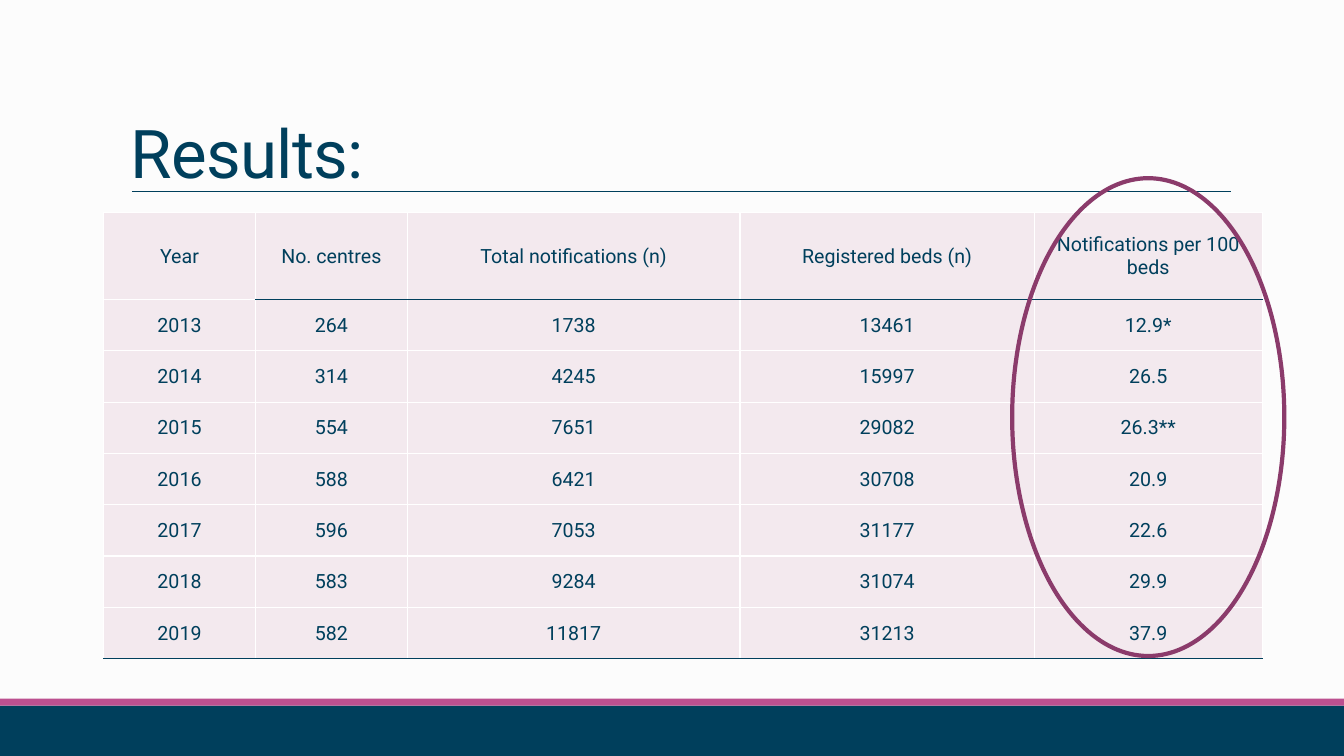
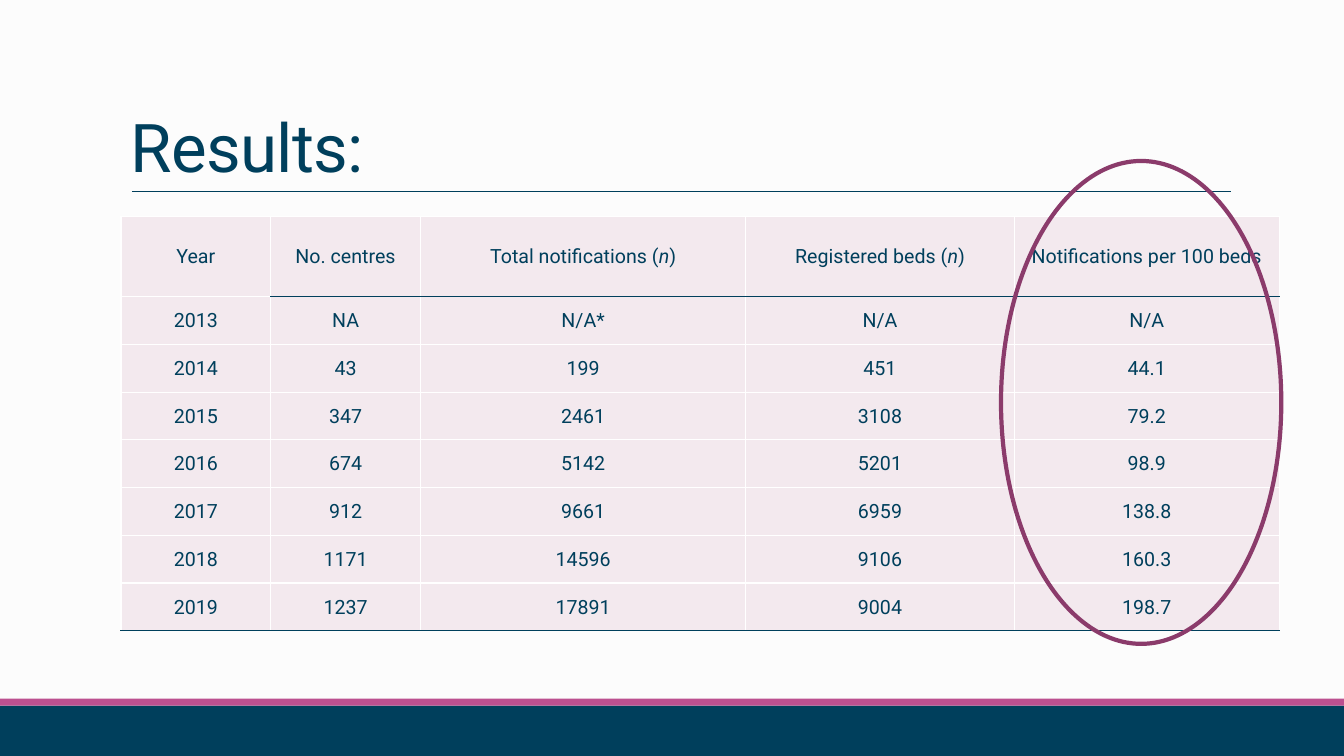
from dataclasses import dataclass

from pptx import Presentation
from pptx.dml.color import RGBColor as RGB
from pptx.enum.shapes import MSO_CONNECTOR as Link, MSO_SHAPE as Kind
from pptx.enum.text import MSO_ANCHOR as Anchor, PP_ALIGN as Align
from pptx.oxml.ns import qn
from pptx.util import Pt
from lxml.etree import SubElement, Element


@dataclass(frozen=True)
class Theme:
    font: str = "Roboto"
    page: str = "FCFCFC"
    navy: str = "003F5C"
    pink: str = "BC5090"
    plum: str = "8B3B6B"
    tint: str = "F3E9EE"
    white: str = "FFFFFF"
    head: int = 48
    body: int = 14


T = Theme()
WIDE, HIGH = 960, 540


def paint(fill, tone):
    fill.solid()
    fill.fore_color.rgb = RGB.from_string(tone)


def write(frame, text, size=T.body, tone=T.navy, align=Align.LEFT,
          anchor=Anchor.MIDDLE, lead=None, track=None):
    """Set one paragraph; text between underscores is italic."""
    frame.word_wrap = True
    frame.vertical_anchor = anchor
    para = frame.paragraphs[0]
    para.alignment = align
    if lead:
        para.line_spacing = lead
    for i, part in enumerate(text.split("_")):
        run = para.add_run()
        run.text = part
        font = run.font
        font.name, font.size = T.font, Pt(size)
        font.color.rgb = RGB.from_string(tone)
        if i % 2:
            font.italic = True
        if track:
            font._element.set("spc", str(int(track * 100)))


def shape(slide, kind, box, fill=None, line=None, width=1):
    item = slide.shapes.add_shape(kind, *map(Pt, box))
    item.shadow.inherit = False
    if fill:
        paint(item.fill, fill)
    else:
        item.fill.background()
    if line:
        paint(item.line.fill, line)
        item.line.width = Pt(width)
    else:
        item.line.fill.background()


def frame(slide):
    """Background, footer bands and title rule."""
    paint(slide.background.fill, T.page)
    shape(slide, Kind.RECTANGLE, (0, 504, WIDE, 36), T.navy)
    shape(slide, Kind.RECTANGLE, (0, 499, WIDE, 5), T.pink)
    rule = slide.shapes.add_connector(
        Link.STRAIGHT, Pt(94.3), Pt(136.5), Pt(879), Pt(136.5))
    paint(rule.line.fill, T.navy)
    rule.line.width = Pt(0.5)
    SubElement(rule._element.spPr, qn("a:effectLst"))


def title(slide, text, box):
    area = slide.shapes.add_textbox(*map(Pt, box))
    write(area.text_frame, text, size=T.head, anchor=Anchor.BOTTOM,
          lead=0.85, track=-0.5)


def border(cell, top, base):
    """Side borders are white; top and base take the given tones."""
    props = cell._tc.get_or_add_tcPr()
    sides = {"L": T.white, "R": T.white, "T": top, "B": base}
    for i, (side, tone) in enumerate(sides.items()):
        line = Element(qn(f"a:ln{side}"), w=str(Pt(1)))
        fill = SubElement(line, qn("a:solidFill"))
        SubElement(fill, qn("a:srgbClr"), val=tone)
        props.insert(i, line)


def table(slide, spot, cols, head, step, rows):
    left, top = spot
    last = len(rows) - 1
    grid = slide.shapes.add_table(
        len(rows), len(cols), Pt(left), Pt(top),
        Pt(sum(cols)), Pt(head + step * last)).table
    grid.first_row = grid.horz_banding = False
    for col, width in zip(grid.columns, cols):
        col.width = Pt(width)
    for r, row in enumerate(rows):
        grid.rows[r].height = Pt(step if r else head)
        for c, text in enumerate(row):
            cell = grid.cell(r, c)
            cell.margin_left = cell.margin_right = cell.margin_top = Pt(0.7)
            cell.margin_bottom = 0
            paint(cell.fill, T.tint)
            # The header rule starts after the year column
            border(cell, T.navy if r == 1 and c else T.white,
                   T.navy if r == last or (r == 0 and c) else T.white)
            write(cell.text_frame, text, align=Align.CENTER)
            cell.vertical_anchor = Anchor.MIDDLE


def result(deck, name, spot, cols, head, step, rows, ring):
    """One results slide: title, table and ring round the rates."""
    slide = deck.slides.add_slide(deck.slide_layouts[6])
    frame(slide)
    title(slide, "Results:", name)
    table(slide, spot, cols, head, step, rows)
    shape(slide, Kind.OVAL, ring, line=T.plum, width=3)


def labels(n):
    return ("Year", "No. centres", f"Total notifications ({n})",
            f"Registered beds ({n})", "Notifications per 100 beds")


FIRST = [
    labels("n"),
    ("2013", "264", "1738", "13461", "12.9*"),
    ("2014", "314", "4245", "15997", "26.5"),
    ("2015", "554", "7651", "29082", "26.3**"),
    ("2016", "588", "6421", "30708", "20.9"),
    ("2017", "596", "7053", "31177", "22.6"),
    ("2018", "583", "9284", "31074", "29.9"),
    ("2019", "582", "11817", "31213", "37.9"),
]
SECOND = [
    labels("_n_"),
    ("2013", "NA", "N/A*", "N/A", "N/A"),
    ("2014", "43", "199", "451", "44.1"),
    ("2015", "347", "2461", "3108", "79.2"),
    ("2016", "674", "5142", "5201", "98.9"),
    ("2017", "912", "9661", "6959", "138.8"),
    ("2018", "1171", "14596", "9106", "160.3"),
    ("2019", "1237", "17891", "9004", "198.7"),
]


def main():
    deck = Presentation()
    deck.slide_width, deck.slide_height = Pt(WIDE), Pt(HIGH)
    result(deck, (86.4, 26.6, 792, 114.5), (74, 152),
           (108.5, 108.5, 237.6, 210.2, 162.8), 62, 36.65, FIRST,
           (723, 127.3, 194.4, 341.3))
    result(deck, (86.4, 22.3, 809.3, 114.5), (86.4, 154.5),
           (107, 107, 232.4, 191.7, 189.4), 57.5, 34.1, SECOND,
           (715, 115, 200.2, 344.9))
    deck.save("out.pptx")


if __name__ == "__main__":
    main()
